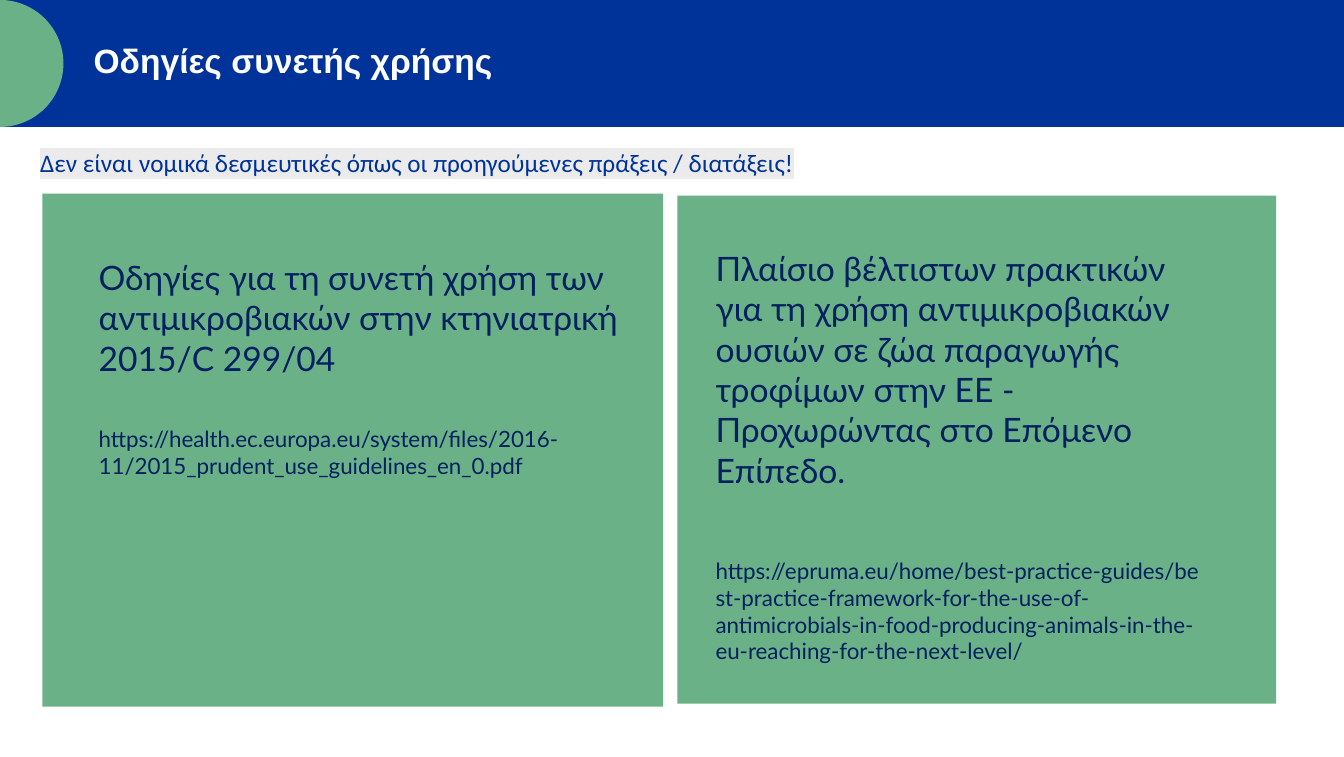
import math

from lxml import etree
from pptx import Presentation
from pptx.dml.color import RGBColor
from pptx.enum.shapes import MSO_SHAPE
from pptx.enum.text import MSO_ANCHOR
from pptx.oxml.ns import qn
from pptx.util import Pt

RECTANGLE = MSO_SHAPE.RECTANGLE
TOP = MSO_ANCHOR.TOP
MIDDLE = MSO_ANCHOR.MIDDLE

COLORS = {
    "blue": "003399",
    "green": "6BB188",
    "navy": "002060",
    "white": "FFFFFF",
    "highlight": "ECEBEB",
}
PAGE_WIDTH, PAGE_HEIGHT = 960, 540.72
HEADER_HEIGHT = 90.72
ARC_STEPS = 60

GUIDES = [
    {
        "panel": (30.24, 138.24, 443.52, 366.48),
        "text": (63.36, 180, 390.24, 216),
        "title": "Οδηγίες για τη συνετή χρήση των αντιμικροβιακών στην κτηνιατρική 2015/C 299/04",
        "link": "https://health.ec.europa.eu/system/files/2016-11/2015_prudent_use_guidelines_en_0.pdf",
        "gap": 33.6,
    },
    {
        "panel": (483.84, 139.68, 427.68, 362.88),
        "text": (504, 173.52, 365.76, 230.4),
        "title": "Πλαίσιο βέλτιστων πρακτικών για τη χρήση αντιμικροβιακών ουσιών σε ζώα "
                 "παραγωγής τροφίμων στην ΕΕ - Προχωρώντας στο Επόμενο Επίπεδο.",
        "link": " https://epruma.eu/home/best-practice-guides/best-practice-framework-for-the-use-of-"
                "antimicrobials-in-food-producing-animals-in-the-eu-reaching-for-the-next-level/",
        "gap": 28.8,
    },
]


def color(name):
    return RGBColor.from_string(COLORS[name])


def paint(shape, fill):
    shape.shadow.inherit = False
    shape.fill.solid()
    shape.fill.fore_color.rgb = color(fill)
    shape.line.fill.background()


def add_panel(page, place, fill):
    paint(page.shapes.add_shape(RECTANGLE, *map(Pt, place)), fill)


def add_half_disc(page, radius, fill):
    angles = [math.pi * (step / ARC_STEPS - 0.5) for step in range(ARC_STEPS + 1)]
    points = [(Pt(radius * math.cos(angle)), Pt(radius * (1 + math.sin(angle))))
              for angle in angles]
    builder = page.shapes.build_freeform(*points[0])
    builder.add_line_segments(points[1:], close=True)
    paint(builder.convert_to_shape(), fill)


def style_span(span, size, font, tint, bold=False):
    span.font.size = Pt(size)
    span.font.name = font
    span.font.bold = bold
    span.font.color.rgb = color(tint)


def add_text(page, place, text, size, font, tint, bold=False, anchor=TOP):
    box = page.shapes.add_textbox(*map(Pt, place))
    frame = box.text_frame
    frame.word_wrap = True
    frame.vertical_anchor = anchor
    frame.text = text
    style_span(frame.paragraphs[0].runs[0], size, font, tint, bold)
    return frame


def highlight(span, tint):
    mark = etree.Element(qn("a:highlight"))
    etree.SubElement(mark, qn("a:srgbClr")).set("val", COLORS[tint])
    span.font.fill
    span._r.rPr.find(qn("a:solidFill")).addnext(mark)


def add_guide(page, guide):
    add_panel(page, guide["panel"], "green")
    frame = add_text(page, guide["text"], guide["title"], 24, "Lato", "navy")
    para = frame.add_paragraph()
    para.text = guide["link"]
    para.space_before = Pt(guide["gap"])
    style_span(para.runs[0], 16, "Lato", "navy")


def main():
    deck = Presentation()
    deck.slide_width, deck.slide_height = Pt(PAGE_WIDTH), Pt(PAGE_HEIGHT)
    page = deck.slides.add_slide(deck.slide_layouts[6])

    add_panel(page, (0, 0, PAGE_WIDTH, HEADER_HEIGHT), "blue")
    add_half_disc(page, HEADER_HEIGHT / 2, "green")
    add_text(page, (59.76, 24.48, 761.76, 37.44), "Οδηγίες συνετής χρήσης",
             24, "Arial", "white", bold=True, anchor=MIDDLE)

    for guide in GUIDES:
        add_guide(page, guide)

    notice = add_text(page, (21.6, 101.52, 656.64, 28.8),
                      "Δεν είναι νομικά δεσμευτικές όπως οι προηγούμενες πράξεις / διατάξεις!",
                      18, "Calibri", "blue")
    highlight(notice.paragraphs[0].runs[0], "highlight")

    deck.save("out.pptx")


if __name__ == "__main__":
    main()
